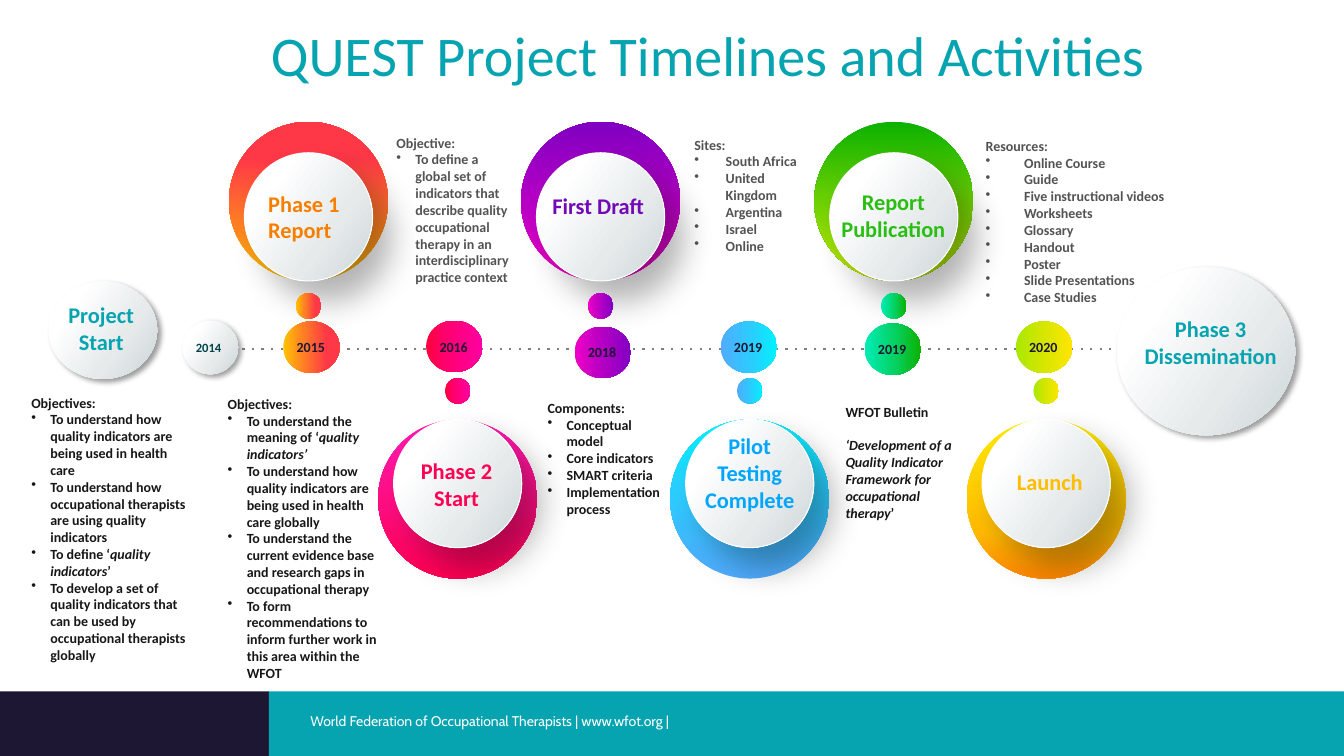
from pptx import Presentation
from pptx.dml.color import RGBColor
from pptx.enum.shapes import MSO_CONNECTOR, MSO_SHAPE
from pptx.enum.text import MSO_ANCHOR, PP_ALIGN
from pptx.oxml import parse_xml
from pptx.oxml.ns import nsdecls, qn
from pptx.util import Cm, Pt

RECT, OVAL = MSO_SHAPE.RECTANGLE, MSO_SHAPE.OVAL
STRAIGHT = MSO_CONNECTOR.STRAIGHT
LEFT, CENTER = PP_ALIGN.LEFT, PP_ALIGN.CENTER
MIDDLE = MSO_ANCHOR.MIDDLE

COLORS = {
    "navy": "1E1734", "teal": "06A3B0", "ink": "181717", "gray": "535353",
    "dots": "808080", "deep": "00454B", "white": "FFFFFF", "orange": "F77F00",
    "pink": "FF0054", "purple": "7209B7", "blue": "00A6FB", "green": "29BF12",
    "gold": "FFBD00",
}
GRADIENTS = {
    "pearl": [(23, "FFFFFF"), (65, "E6EAEB"), (100, "CDD5D8")],
    "sunset": [(0, "FFC203"), (37, "FF7D25"), (77, "FF3847")],
    "rose": [(2, "FF0040"), (37, "FF0071"), (99, "FF00A2")],
    "rose ring": [(2, "FF1BB1"), (52, "FF0E82"), (98, "FF0054")],
    "violet": [(0, "F000C6"), (47, "B800C4"), (100, "8000C2")],
    "sky": [(2, "4FACFE"), (58, "28CFFE"), (100, "00F2FE")],
    "mint": [(0, "00EDB7"), (57, "06CF5C"), (100, "0CB100")],
    "leaf ring": [(0, "0CB100"), (47, "67CE02"), (99, "C3EA03")],
    "lime": [(0, "A9E800"), (47, "D4E600"), (100, "FFE500")],
    "gold ring": [(0, "FFEA03"), (71, "FFBA02"), (98, "FF8A00")],
}
SMALL_SHADOW, LARGE_SHADOW = (38, 4, 3.1, 39), (30, 24, 19, 48)
RING, DISC, DOT, YEAR_W, YEAR_H = 4.01, 3.23, 0.64, 1.42, 1.3
PAD = 0.13

# year, year box left and top, its gradient, ring left, ring gradient and angle, above the line, label
MILESTONES = [
    ("2015", 7.14, 8.1, "sunset", 5.77, "sunset", 270, True,
     ("Phase 1 Report", "orange", 6.63, 4.65, 2.51, LEFT)),
    ("2016", 10.74, 8.08, "rose", 9.53, "rose ring", 90, False,
     ("Phase 2 Start", "pink", 10.26, 11.4, 2.49, CENTER)),
    ("2018", 14.48, 8.23, "violet", 13.13, "violet", 270, True,
     ("First Draft", "purple", 13.74, 4.7, 2.67, CENTER)),
    ("2019", 18.16, 8.1, "sky", 16.89, "sky", 270, False,
     ("Pilot Testing Complete", "blue", 17.37, 10.77, 3.05, CENTER)),
    ("2019", 21.79, 8.15, "mint", 20.52, "leaf ring", 90, True,
     ("Report Publication", "green", 20.9, 4.62, 3.23, CENTER)),
    ("2020", 25.6, 8.1, "lime", 24.36, "gold ring", 90, False,
     ("Launch", "gold", 25.12, 11.66, 2.67, CENTER)),
]
NOTES = [
    ((0.66, 9.8, 4.17, 8), "ink", 0.48, "Objectives:", [
        "To understand how quality indicators are being used in health care",
        "To understand how occupational therapists are using quality indicators",
        "To define ‘*quality indicators*’",
        "To develop a set of quality indicators that can be used by occupational therapists globally"]),
    ((5.61, 9.83, 4.11, 9.07), "ink", 0.48, "Objectives:", [
        "To understand the meaning of ‘*quality indicators’*",
        "To understand how quality indicators are being used in health care globally",
        "To understand the current evidence base and research gaps in occupational therapy",
        "To form recommendations to inform further work in this area within the WFOT"]),
    ((9.86, 3.25, 3.23, 4.11), "gray", 0.48, "Objective:", [
        "To define a global set of indicators that describe quality occupational therapy "
        "in an interdisciplinary practice context"]),
    ((13.67, 9.93, 3.15, 4), "ink", 0.48, "Components:", [
        "Conceptual model", "Core indicators", "SMART criteria", "Implementation process"]),
    ((17.37, 3.3, 3.12, 3.7), "gray", 0.79, "Sites:", [
        "South Africa", "United Kingdom", "Argentina", "Israel", "Online"]),
    ((21.18, 10.03, 3.12, 3.25), "ink", 0, "WFOT Bulletin", [
        "*‘Development of a Quality Indicator Framework for*", "*occupational therapy*’"]),
    ((24.71, 3.33, 4.83, 5.31), "gray", 0.97, "Resources:", [
        "Online Course", "Guide", "Five instructional videos", "Worksheets", "Glossary",
        "Handout", "Poster", "Slide Presentations", "Case Studies"]),
]


def rgb(name):
    """Return the named colour."""
    return RGBColor.from_string(COLORS[name])


def add_runs(p, text, size, color, bold=True, font="Calibri"):
    """Add text run by run, with the parts between asterisks in italics."""
    for i, part in enumerate(text.split("*")):
        if part:
            r = p.add_run()
            r.text = part
            r.font.name, r.font.size, r.font.bold = font, Pt(size), bold
            r.font.italic = i % 2 == 1
            r.font.color.rgb = rgb(color)


def set_margins(tf, side=PAD, top=PAD):
    """Turn wrapping on and set the text margins."""
    tf.word_wrap = True
    tf.margin_left = tf.margin_right = Cm(side)
    tf.margin_top = tf.margin_bottom = Cm(top)


def add_text(slide, box, lines, size, color, align=LEFT, side=PAD, bold=True, font="Calibri"):
    """Add a text box with one paragraph for each line."""
    tf = slide.shapes.add_textbox(*map(Cm, box)).text_frame
    set_margins(tf, side)
    for i, line in enumerate(lines):
        p = tf.add_paragraph() if i else tf.paragraphs[0]
        p.alignment = align
        add_runs(p, line, size, color, bold, font)
    return tf


def add_band(slide, left, width, color):
    """Add a plain footer band."""
    s = slide.shapes.add_shape(RECT, Cm(left), Cm(17.42), Cm(width), Cm(1.63))
    s.shadow.inherit = False
    s.fill.solid()
    s.fill.fore_color.rgb = rgb(color)
    s.line.fill.background()


def add_circle(slide, box, gradient, angle=0, shadow=None, outlined=False):
    """Add an ellipse with a gradient and an optional shadow."""
    s = slide.shapes.add_shape(OVAL, *map(Cm, box))
    s.shadow.inherit = False
    if outlined:
        s.line.color.rgb = rgb("white")
        s.line.width = Pt(0.75)
    else:
        s.line.fill.background()
    stops = "".join(f'<a:gs pos="{pos * 1000}"><a:srgbClr val="{color}"/></a:gs>'
                    for pos, color in GRADIENTS[gradient])
    sp = s._element.spPr
    sp.find(qn("a:prstGeom")).addnext(parse_xml(
        f'<a:gradFill {nsdecls("a")} rotWithShape="1"><a:gsLst>{stops}</a:gsLst>'
        f'<a:lin ang="{angle * 60000}" scaled="0"/></a:gradFill>'))
    if shadow:
        alpha, blur, dist, turn = shadow
        sp.find(qn("a:effectLst")).append(parse_xml(
            f'<a:outerShdw {nsdecls("a")} blurRad="{Pt(blur)}" dist="{Pt(dist)}" '
            f'dir="{turn * 60000}" algn="tl" rotWithShape="0"><a:srgbClr val="000000">'
            f'<a:alpha val="{alpha * 1000}"/></a:srgbClr></a:outerShdw>'))
    return s


def add_year(s, year, size, color):
    """Write a year inside a circle."""
    tf = s.text_frame
    set_margins(tf)
    tf.vertical_anchor = MIDDLE
    tf.paragraphs[0].alignment = LEFT
    add_runs(tf.paragraphs[0], year, size, color)


def add_note(slide, box, color, indent, heading, items):
    """Add a heading with its bulleted or plain items."""
    tf = add_text(slide, box, [heading] + items, 10, color)
    if not indent:
        tf.paragraphs[1].space_before = Pt(12)
        return
    for p in tf.paragraphs[1:]:
        pPr = p._p.get_or_add_pPr()
        pPr.set("marL", str(Cm(indent)))
        pPr.set("indent", str(-Cm(indent)))
        pPr.append(parse_xml(f'<a:buChar {nsdecls("a")} char="•"/>'))


def add_timeline(slide):
    """Add the dotted line through the years."""
    s = slide.shapes.add_connector(STRAIGHT, Cm(5.87), Cm(8.79), Cm(28.4), Cm(8.79))
    s.line.color.rgb = rgb("dots")
    s.line.width = Pt(1.7)
    sp = s._element.spPr
    sp.find(qn("a:ln")).append(parse_xml(f'<a:prstDash {nsdecls("a")} val="dot"/>'))
    sp.append(parse_xml(f'<a:effectLst {nsdecls("a")}/>'))


def add_milestone(slide, year, x, y, gradient, ring_x, ring_gradient, angle, above, label):
    """Add a year, its ring and disc, the linking dot and the label."""
    s = add_circle(slide, (x, y, YEAR_W, YEAR_H), gradient)
    add_year(s, year, 10, "navy")
    ring_y, dot_y = (3.07, 7.39) if above else (10.57, 9.53)
    disc_y = ring_y + RING - DISC if above else ring_y
    add_circle(slide, (ring_x, ring_y, RING, RING), ring_gradient, angle)
    add_circle(slide, (ring_x + (RING - DISC) / 2, disc_y, DISC, DISC), "pearl", 36,
               LARGE_SHADOW, outlined=True)
    add_circle(slide, (ring_x + (RING - DOT) / 2, dot_y, DOT, DOT), gradient)
    text, color, left, top, width, align = label
    add_text(slide, (left, top, width, 1.63), [text], 16, color, align)


def main():
    """Build the timeline slide."""
    prs = Presentation()
    prs.slide_width, prs.slide_height = Cm(33.87), Cm(19.05)
    slide = prs.slides.add_slide(prs.slide_layouts[6])
    add_band(slide, 0, 6.78, "navy")
    add_band(slide, 6.78, 27.09, "teal")
    for note in NOTES:
        add_note(slide, *note)
    add_timeline(slide)
    add_circle(slide, (1.22, 7.09, 2.74, 2.46), "pearl", 35, SMALL_SHADOW)
    add_circle(slide, (28.14, 6.73, 4.5, 4.24), "pearl", 35, SMALL_SHADOW)
    s = add_circle(slide, (4.6, 8.08, 1.4, 1.35), "pearl", 35, SMALL_SHADOW)
    add_year(s, "2014", 9, "deep")
    for milestone in MILESTONES:
        add_milestone(slide, *milestone)
    add_text(slide, (1.09, 7.47, 2.92, 2.13), ["Project", "Start"], 16, "teal", CENTER)
    add_text(slide, (28.35, 7.82, 4.32, 1.63), ["Phase 3 Dissemination"], 16, "teal", CENTER)
    add_text(slide, (6.58, 0.38, 22.76, 1.96), ["QUEST Project Timelines and Activities"],
             40, "teal", side=0.25, bold=False)
    add_text(slide, (7.57, 17.83, 15, 1.2),
             ["World Federation of Occupational Therapists | www.wfot.org |"],
             10, "white", side=0.25, bold=False, font="Cabin")
    prs.save("out.pptx")


if __name__ == "__main__":
    main()
